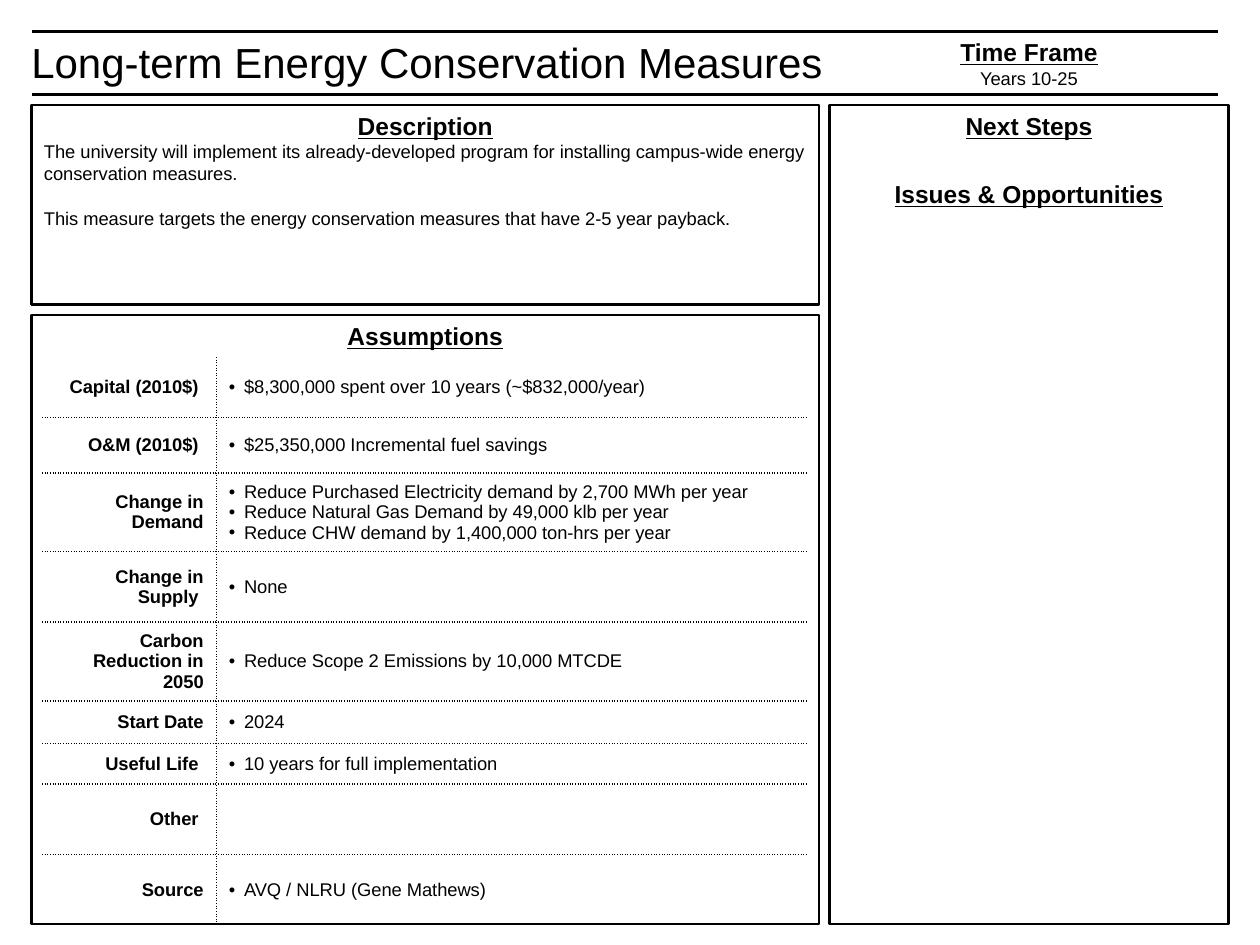
from lxml import etree
from pptx import Presentation, util as u
from pptx.dml.color import RGBColor
from pptx.enum import shapes, text
from pptx.oxml import ns

COLORS = {"ink": "000000", "paper": "FFFFFF"}
FONT = "Arial"
COLUMNS, ROWS = 120, 90
UNIT = u.Inches(10) / COLUMNS
TITLE_SIZE, HEADING_SIZE, BODY_SIZE = 24, 14, 10.5

ASSUMPTIONS = [
    ("Capital (2010$) ", ["$8,300,000 spent over 10 years (~$832,000/year)"], 0.48),
    ("O&M (2010$) ", ["$25,350,000 Incremental fuel savings"], 0.44),
    ("Change in Demand", ["Reduce Purchased Electricity demand by 2,700 MWh per year",
                          "Reduce Natural Gas Demand by 49,000 klb per year",
                          "Reduce CHW demand by 1,400,000 ton-hrs per year"], 0.62),
    ("Change in Supply ", ["None"], 0.56),
    ("Carbon Reduction in 2050", ["Reduce Scope 2 Emissions by 10,000 MTCDE"], 0.62),
    ("Start Date", ["2024"], 0.34),
    ("Useful Life ", ["10 years for full implementation"], 0.32),
    ("Other ", [], 0.56),
    ("Source", ["AVQ / NLRU (Gene Mathews)"], 0.56),
]


def grid(*cells):
    """Turn grid counts into lengths."""
    return [u.Emu(round(cell * UNIT)) for cell in cells]


def color(name):
    """Look up a colour of the palette."""
    return RGBColor.from_string(COLORS[name])


def format_text(paragraph, size, align="LEFT", bold=False, underline=False):
    """Give a paragraph and its runs their look."""
    paragraph.alignment = getattr(text.PP_ALIGN, align)
    for font in [paragraph.font] + [run.font for run in paragraph.runs]:
        font.name, font.size = FONT, u.Pt(size)
        font.bold, font.underline = bold, underline
        font.color.rgb = color("ink")


def format_heading(paragraph):
    """Style a paragraph as a centred, underlined heading."""
    format_text(paragraph, HEADING_SIZE, "CENTER", True, True)


def add_rule(slide, left, top, width):
    """Draw a horizontal black line."""
    rule = slide.shapes.add_connector(
        shapes.MSO_CONNECTOR.STRAIGHT, *grid(left, top, left + width, top))
    rule.line.color.rgb = color("ink")
    rule.line.width = u.Pt(1.25)
    etree.SubElement(rule._element.spPr, ns.qn("a:effectLst"))


def add_header(slide, left, top, width, height, split):
    """Place the ruled title band with the time frame at its right."""
    for edge in (top, top + height):
        add_rule(slide, left, edge, width - 1)
    title = slide.shapes.add_textbox(*grid(left - 1.2, top - 0.1, split + 3.7, height))
    title.text_frame.word_wrap = False
    title.text_frame.auto_size = text.MSO_AUTO_SIZE.SHAPE_TO_FIT_TEXT
    title.text_frame.text = "Long-term Energy Conservation Measures"
    format_text(title.text_frame.paragraphs[0], TITLE_SIZE)
    time_frame = slide.shapes.add_textbox(*grid(left + split, top, width - split, height))
    frame = time_frame.text_frame
    frame.word_wrap = False
    frame.vertical_anchor = text.MSO_ANCHOR.MIDDLE
    frame.text = "Time Frame\nYears 10-25"
    format_heading(frame.paragraphs[0])
    format_text(frame.paragraphs[1], BODY_SIZE, "CENTER")


def add_panel(slide, box, heading):
    """Draw an outlined panel with a heading and return its text frame."""
    panel = slide.shapes.add_shape(shapes.MSO_SHAPE.RECTANGLE, *grid(*box))
    panel.shadow.inherit = False
    panel.fill.background()
    panel.line.color.rgb = color("ink")
    panel.line.width = u.Pt(1.25)
    frame = panel.text_frame
    frame.vertical_anchor = text.MSO_ANCHOR.TOP
    frame.text = heading
    format_heading(frame.paragraphs[0])
    return frame


def add_description(slide, *box):
    """Place the description panel."""
    frame = add_panel(slide, box, "Description")
    for gap, sentence in (
            (0, "The university will implement its already-developed program for "
                "installing campus-wide energy conservation measures."),
            (13, "This measure targets the energy conservation measures that have "
                 "2-5 year payback.")):
        paragraph = frame.add_paragraph()
        paragraph.text = sentence
        paragraph.space_before = u.Pt(gap)
        format_text(paragraph, BODY_SIZE)


def add_next_steps(slide, *box):
    """Place the panel of next steps and issues."""
    frame = add_panel(slide, box, "Next Steps")
    paragraph = frame.add_paragraph()
    paragraph.text = "Issues & Opportunities"
    paragraph.space_before = u.Pt(22)
    format_heading(paragraph)


def set_borders(cell, dotted):
    """Dot the named sides of a cell and clear the others."""
    properties = cell._tc.get_or_add_tcPr()
    for index, side in enumerate("LRTB"):
        line = etree.Element(ns.qn(f"a:ln{side}"), w=str(u.Pt(1)))
        if side in dotted:
            fill = etree.SubElement(line, ns.qn("a:solidFill"))
            etree.SubElement(fill, ns.qn("a:srgbClr"), val=COLORS["ink"])
            etree.SubElement(line, ns.qn("a:prstDash"), val="sysDot")
        else:
            etree.SubElement(line, ns.qn("a:noFill"))
        properties.insert(index, line)


def add_bullet(paragraph):
    """Give a paragraph a hanging bullet."""
    properties = paragraph._p.get_or_add_pPr()
    properties.set("marL", str(u.Inches(0.12)))
    properties.set("indent", str(-u.Inches(0.12)))
    properties.insert(0, etree.Element(ns.qn("a:buFont"), typeface=FONT))
    properties.insert(1, etree.Element(ns.qn("a:buChar"), char="•"))


def add_assumptions(slide, left, top, width, height):
    """Place the assumptions panel with its dotted table."""
    add_panel(slide, (left, top, width, height), "Assumptions")
    count = len(ASSUMPTIONS)
    table = slide.shapes.add_table(
        count, 2, *grid(left + 1, top + 4, width - 2, height - 4)).table
    table.first_row = table.horz_banding = False
    table.columns[0].width, table.columns[1].width = grid(16.6, width - 18.6)
    for index, (label, facts, row_height) in enumerate(ASSUMPTIONS):
        table.rows[index].height = u.Inches(row_height)
        inner = ("T" if index else "") + ("B" if index < count - 1 else "")
        for column, (words, shared) in enumerate(((label, "R"), ("\n".join(facts), "L"))):
            cell = table.cell(index, column)
            cell.text_frame.text = words
            cell.vertical_anchor = text.MSO_ANCHOR.MIDDLE
            cell.fill.background()
            set_borders(cell, inner + shared)
            for paragraph in cell.text_frame.paragraphs:
                format_text(paragraph, BODY_SIZE, "LEFT" if column else "RIGHT", not column)
                if column and facts:
                    add_bullet(paragraph)


def main():
    """Build the slide and save it."""
    presentation = Presentation()
    presentation.slide_width, presentation.slide_height = grid(COLUMNS, ROWS)
    slide = presentation.slides.add_slide(presentation.slide_layouts[6])
    slide.background.fill.solid()
    slide.background.fill.fore_color.rgb = color("paper")
    add_header(slide, 3, 3, 114, 6, split=76)
    add_description(slide, 3, 10, 75, 19)
    add_assumptions(slide, 3, 30, 75, 58)
    add_next_steps(slide, 79, 10, 38, 78)
    presentation.save("out.pptx")


if __name__ == "__main__":
    main()
